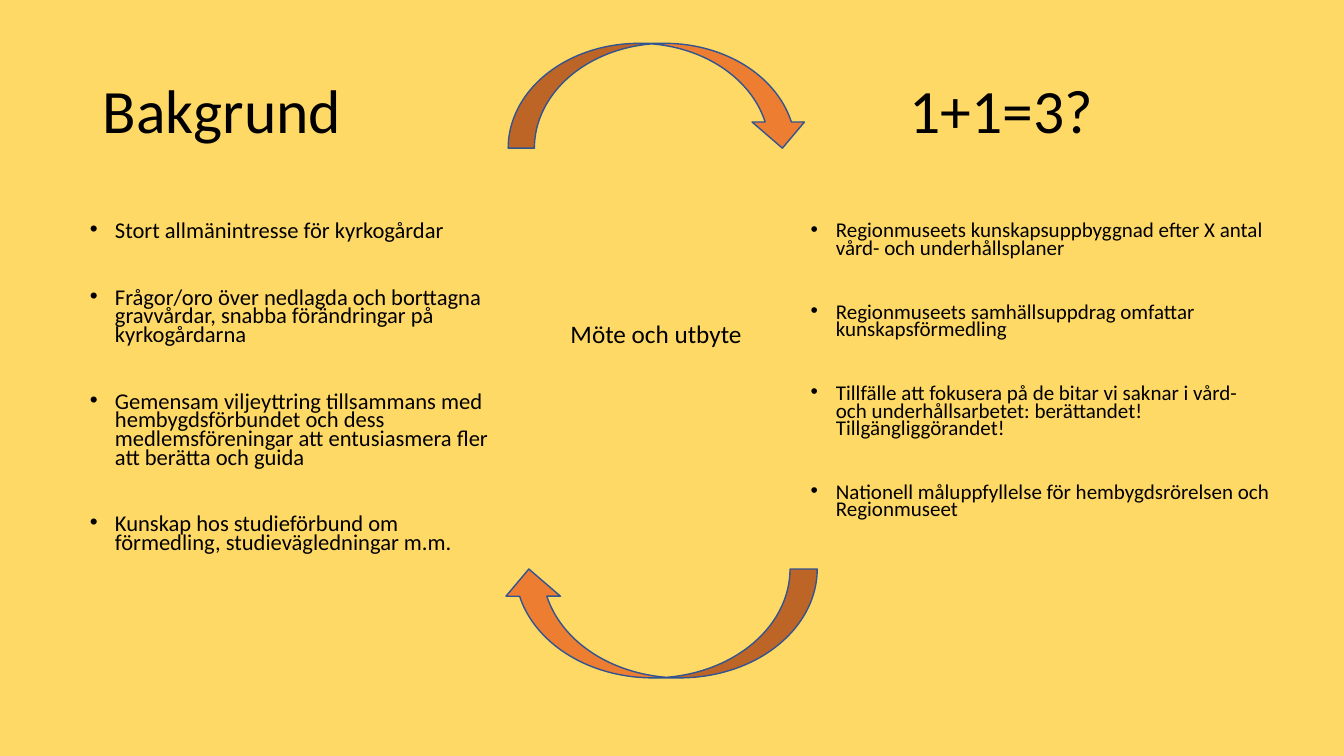
from lxml import etree
from pptx import Presentation
from pptx.dml.color import RGBColor
from pptx.enum.shapes import MSO_SHAPE
from pptx.enum.text import MSO_ANCHOR, MSO_AUTO_SIZE, PP_ALIGN
from pptx.oxml.ns import qn
from pptx.util import Inches, Pt

CURVED_ARROW = MSO_SHAPE.CURVED_LEFT_ARROW
MIDDLE, TOP = MSO_ANCHOR.MIDDLE, MSO_ANCHOR.TOP
NO_FIT = MSO_AUTO_SIZE.NONE
LEFT = PP_ALIGN.LEFT

FONT = "Calibri"
COLORS = {"background": "FFD966", "text": "000000", "arrow": "ED7D31", "outline": "325491"}

BACKGROUND_POINTS = [
    "Stort allmänintresse för kyrkogårdar",
    "Frågor/oro över nedlagda och borttagna gravvårdar, snabba förändringar på kyrkogårdarna",
    "Gemensam viljeyttring tillsammans med hembygdsförbundet och dess "
    "medlemsföreningar att entusiasmera fler att berätta och guida",
    "Kunskap hos studieförbund om förmedling, studievägledningar m.m.",
]
RESULT_POINTS = [
    "Regionmuseets kunskapsuppbyggnad efter X antal vård- och underhållsplaner",
    "Regionmuseets samhällsuppdrag omfattar kunskapsförmedling",
    "Tillfälle att fokusera på de bitar vi saknar i vård- och underhållsarbetet: "
    "berättandet! Tillgängliggörandet!",
    "Nationell måluppfyllelse för hembygdsrörelsen och Regionmuseet",
]


def rgb(name):
    """Return the named colour."""
    return RGBColor.from_string(COLORS[name])


def place(sp, box):
    """Move a shape to a box of left, top, width and height in inches."""
    sp.left, sp.top, sp.width, sp.height = (Inches(v) for v in box)


def format_runs(p, size):
    """Apply the slide's font, colour and a size to every run."""
    for r in p.runs:
        r.font.name = FONT
        r.font.size = Pt(size)
        r.font.color.rgb = rgb("text")


def fill_title(sp, box, left_head, right_head, tab):
    """Write two headings on one title line, parted by a tab stop."""
    place(sp, box)
    tf = sp.text_frame
    tf.auto_size = NO_FIT
    tf.vertical_anchor = MIDDLE
    tf.text = f"{left_head}\t{right_head}"
    p = tf.paragraphs[0]
    tabs = etree.SubElement(p._p.get_or_add_pPr(), qn("a:tabLst"))
    etree.SubElement(tabs, qn("a:tab"), pos=str(Inches(tab)), algn="l")
    p.alignment = LEFT
    p.line_spacing = 0.9
    format_runs(p, 44)


def fill_list(sp, box, points, size, gap):
    """Write a tightly set bullet list with a wide gap between points."""
    place(sp, box)
    tf = sp.text_frame
    tf.auto_size = NO_FIT
    tf.vertical_anchor = TOP
    tf.text = "\n".join(points)
    for i, p in enumerate(tf.paragraphs):
        pPr = p._p.get_or_add_pPr()
        pPr.set("marL", str(Inches(0.25)))
        pPr.set("indent", str(Inches(-0.25)))
        etree.SubElement(pPr, qn("a:buFont"), typeface="Arial")
        etree.SubElement(pPr, qn("a:buChar"), char="•")
        p.line_spacing = 0.7
        p.space_before = Pt(gap if i else 0)
        format_runs(p, size)


def add_label(slide, box, text):
    """Add the label between the two arrows."""
    sp = slide.shapes.add_textbox(*(Inches(v) for v in box))
    tf = sp.text_frame
    tf.word_wrap = True
    tf.text = text
    format_runs(tf.paragraphs[0], 18)


def add_cycle_arrow(slide, box, rotation):
    """Add a curved arrow whose box is given before rotation."""
    sp = slide.shapes.add_shape(CURVED_ARROW, *(Inches(v) for v in box))
    sp.rotation = rotation
    sp.shadow.inherit = False
    sp.fill.solid()
    sp.fill.fore_color.rgb = rgb("arrow")
    sp.line.color.rgb = rgb("outline")
    sp.line.width = Pt(1)


def build_exchange_slide(prs):
    """Build the slide with two lists joined by a cycle of arrows."""
    slide = prs.slides.add_slide(prs.slide_layouts[3])
    slide.background.fill.solid()
    slide.background.fill.fore_color.rgb = rgb("background")
    title, left, right = slide.placeholders
    fill_title(title, (0.92, 0.4, 11.5, 1.45), "Bakgrund", "1+1=3?", 8)
    fill_list(left, (0.79, 2.17, 4.18, 3.59), BACKGROUND_POINTS, 16.1, 33.7)
    fill_list(right, (7.94, 2.17, 4.76, 3.07), RESULT_POINTS, 15, 32.8)
    add_label(slide, (5.56, 3.11, 1.95, 0.4), "Möte och utbyte")
    add_cycle_arrow(slide, (6.01, -0.54, 1.04, 2.98), 270)
    add_cycle_arrow(slide, (6, 4.62, 1.08, 3.13), 90)


def main():
    """Create and save the presentation."""
    prs = Presentation()
    prs.slide_width, prs.slide_height = Inches(13.33), Inches(7.5)
    build_exchange_slide(prs)
    prs.save("out.pptx")


if __name__ == "__main__":
    main()
